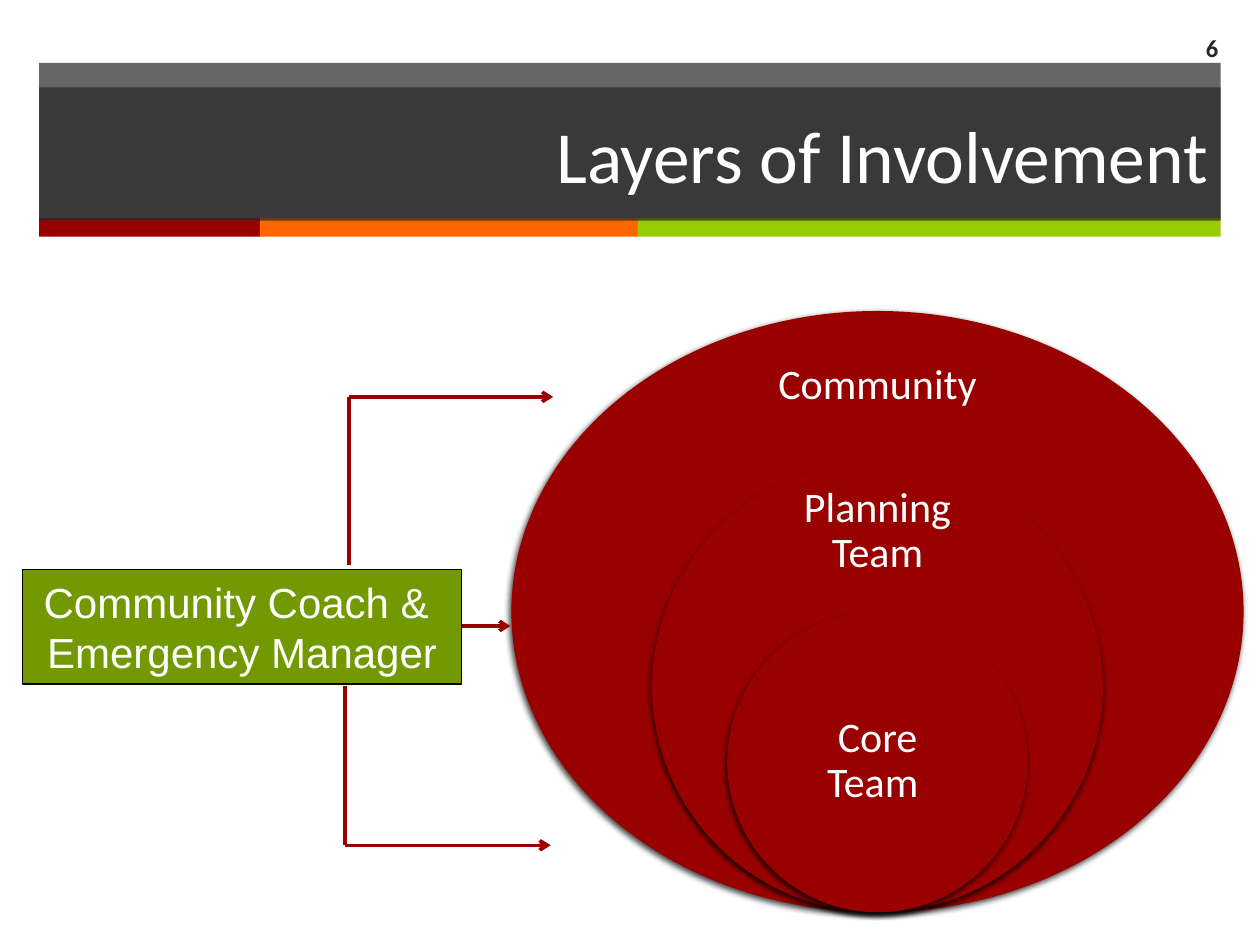
from lxml.etree import SubElement
from pptx import Presentation
from pptx.dml.color import RGBColor
from pptx.enum.shapes import MSO_CONNECTOR as Connector, MSO_SHAPE as Shape
from pptx.enum.text import MSO_ANCHOR as Anchor, PP_ALIGN as Align
from pptx.oxml.ns import qn
from pptx.util import Cm, Pt


def color(code):
    return RGBColor.from_string(code)


class SlideBuilder:
    """Draws styled elements on the current slide, with lengths in centimetres."""

    dark, red, orange, lime, green, white = (
        "262626", "990000", "FF6600", "99CC00", "739900", "FFFFFF")

    def __init__(self, slide):
        self.slide = slide

    def shape(self, kind, left, top, width, height, fill, line=None, alpha=None):
        shape = self.slide.shapes.add_shape(kind, Cm(left), Cm(top), Cm(width), Cm(height))
        shape.shadow.inherit = False
        shape.fill.solid()
        shape.fill.fore_color.rgb = color(fill)
        if alpha:
            fill_color = shape._element.spPr.find(qn("a:solidFill"))[0]
            SubElement(fill_color, qn("a:alpha"), val=str(alpha * 1000))
        if line:
            shape.line.color.rgb = color(line)
            shape.line.width = Pt(0.75)
        else:
            shape.line.fill.background()
        return shape

    def layer(self, center, bottom, width, height):
        shape = self.shape(Shape.OVAL, center - width / 2, bottom - height,
                           width, height, self.red)
        effects = shape._element.spPr.find(qn("a:effectLst"))
        shadow = SubElement(effects, qn("a:outerShdw"), blurRad=str(Pt(3)), dist=str(Pt(2)),
                            dir=str(110 * 60000), rotWithShape="0")
        black = SubElement(shadow, qn("a:srgbClr"), val="000000")
        SubElement(black, qn("a:alpha"), val="75000")

    def fill_text(self, shape, lines, size, align=Align.CENTER, font="Calibri",
                  ink=white, bold=False, spacing=None):
        frame = shape.text_frame
        frame.word_wrap = True
        frame.vertical_anchor = Anchor.MIDDLE
        for index, line in enumerate(lines):
            paragraph = frame.add_paragraph() if index else frame.paragraphs[0]
            paragraph.alignment = align
            paragraph.line_spacing = spacing
            run = paragraph.add_run()
            run.text = line
            run.font.name = font
            run.font.size = Pt(size)
            run.font.bold = bold
            run.font.color.rgb = color(ink)

    def text(self, left, top, width, height, line, size, margin=None, **style):
        box = self.slide.shapes.add_textbox(Cm(left), Cm(top), Cm(width), Cm(height))
        if margin:
            frame = box.text_frame
            frame.margin_left = frame.margin_right = Cm(margin)
            frame.margin_top = frame.margin_bottom = Cm(margin)
        self.fill_text(box, [line], size, **style)

    def line(self, start_x, start_y, end_x, end_y, arrow=False):
        connector = self.slide.shapes.add_connector(
            Connector.STRAIGHT, Cm(start_x), Cm(start_y), Cm(end_x), Cm(end_y))
        connector.line.color.rgb = color(self.red)
        connector.line.width = Pt(2)
        properties = connector._element.spPr
        if arrow:
            SubElement(properties.find(qn("a:ln")), qn("a:tailEnd"), type="arrow")
        SubElement(properties, qn("a:effectLst"))


def main():
    presentation = Presentation()
    presentation.slide_width, presentation.slide_height = Cm(25.4), Cm(19.05)
    builder = SlideBuilder(presentation.slides.add_slide(presentation.slide_layouts[6]))

    margin, banner_width = 0.79, 23.82
    builder.shape(Shape.RECTANGLE, margin, 1.27, banner_width, 3.15, builder.dark, alpha=70)
    left = margin
    for width, fill in ((4.45, builder.red), (7.62, builder.orange), (11.75, builder.lime)):
        builder.shape(Shape.RECTANGLE, left, 4.4, width, 0.37, fill)
        left += width
    title = builder.shape(Shape.RECTANGLE, margin, 1.76, banner_width, 2.69,
                          builder.dark, alpha=70)
    builder.fill_text(title, ["Layers of Involvement"], 42, align=Align.RIGHT)
    builder.text(23.06, 0.46, 1.75, 0.99, "6", 14,
                 align=Align.RIGHT, ink=builder.dark, bold=True)

    center, bottom, full_height = 17.69, 18.39, 12.12
    layers = (
        (14.76, 1, "Community", 6.86, 5.16, 1.83),
        (9.09, 0.75, "Planning Team", 9.86, 4.24, 1.7),
        (6.06, 0.5, "Core Team ", 13.84, 4.29, 3.02),
    )
    for width, share, label, label_top, label_width, label_height in layers:
        builder.layer(center, bottom, width, full_height * share)
        builder.text(center - label_width / 2, label_top, label_width, label_height,
                     label, 24, margin=0.48, spacing=0.9)

    for stem, start, end, tip in ((7.04, 11.38, 8, 11.15), (6.96, 13.82, 17.04, 11.1)):
        builder.line(stem, start, stem, end)
        builder.line(stem, end, tip, end, arrow=True)
    builder.line(6.17, 12.62, 10.29, 12.62, arrow=True)
    coach = builder.shape(Shape.RECTANGLE, 0.46, 11.48, 8.84, 2.31,
                          builder.green, line="000000")
    builder.fill_text(coach, ["Community Coach & ", "Emergency Manager"], 24, font="Arial")

    presentation.save("out.pptx")


if __name__ == "__main__":
    main()
